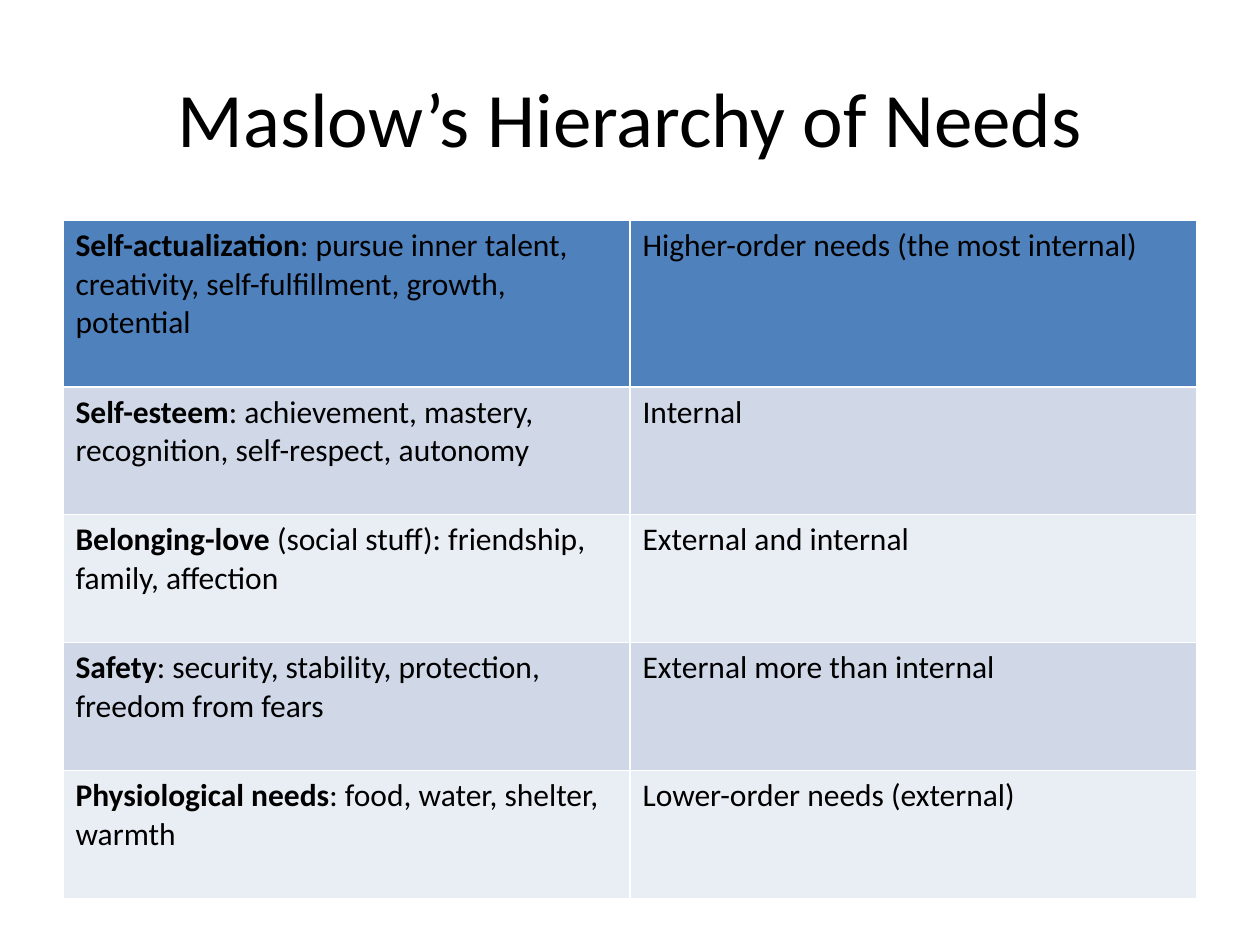
"""Build a slide with a table of Maslow's hierarchy of needs."""
from dataclasses import dataclass

from pptx import Presentation
from pptx.dml.color import RGBColor
from pptx.enum.text import MSO_ANCHOR, PP_ALIGN
from pptx.util import Inches, Pt

CENTER = PP_ALIGN.CENTER
MIDDLE = MSO_ANCHOR.MIDDLE
BLACK = RGBColor(0x00, 0x00, 0x00)
HEADER_BLUE = RGBColor(0x4F, 0x81, 0xBD)
BANDS = (RGBColor(0xD0, 0xD8, 0xE8), RGBColor(0xE9, 0xED, 0xF4))
FONT = "Calibri"
TITLE_ONLY = 5

WIDTH, HEIGHT = Inches(10), Inches(7.5)
MARGIN = int(WIDTH * 0.05)
CONTENT_WIDTH = WIDTH - 2 * MARGIN
TABLE_TOP = Inches(1.75)
TOP_ROW_HEIGHT = Inches(1.32)
ROW_HEIGHT = Inches(1.015)


@dataclass(frozen=True)
class Need:
    """A level of the hierarchy, its examples and where it arises."""
    name: str
    examples: str
    source: str


NEEDS = (
    Need("Self-actualization",
         ": pursue inner talent, creativity, self-fulfillment, growth, potential",
         "Higher-order needs (the most internal)"),
    Need("Self-esteem",
         ": achievement, mastery, recognition, self-respect, autonomy",
         "Internal"),
    Need("Belonging-love ",
         "(social stuff): friendship, family, affection",
         "External and internal"),
    Need("Safety",
         ": security, stability, protection, freedom from fears",
         "External more than internal"),
    Need("Physiological needs",
         ": food, water, shelter, warmth",
         "Lower-order needs (external)"),
)


def style_font(paragraph, size: int) -> None:
    """Give a paragraph the slide's typeface and text colour."""
    paragraph.font.name = FONT
    paragraph.font.size = Pt(size)
    paragraph.font.color.rgb = BLACK


def write_cell(cell, parts: tuple[tuple[str, bool], ...], fill: RGBColor) -> None:
    """Fill a cell and write its parts, each with its own weight."""
    cell.fill.solid()
    cell.fill.fore_color.rgb = fill
    paragraph = cell.text_frame.paragraphs[0]
    style_font(paragraph, 18)
    for text, bold in parts:
        run = paragraph.add_run()
        run.text = text
        run.font.bold = bold
        run.font.name = FONT
        run.font.size = Pt(18)
        run.font.color.rgb = BLACK


def add_title(slide, text: str) -> None:
    """Place and format the title."""
    title = slide.shapes.title
    title.left, title.top = MARGIN, int(HEIGHT * 0.04)
    title.width, title.height = CONTENT_WIDTH, Inches(1.25)
    title.text_frame.text = text
    title.text_frame.vertical_anchor = MIDDLE
    heading = title.text_frame.paragraphs[0]
    heading.alignment = CENTER
    style_font(heading, 44)


def add_needs_table(slide, needs: tuple[Need, ...]) -> None:
    """Add one row per need, with the top level as the header row."""
    table_height = TOP_ROW_HEIGHT + ROW_HEIGHT * (len(needs) - 1)
    table = slide.shapes.add_table(
        len(needs), 2, MARGIN, TABLE_TOP, CONTENT_WIDTH, table_height).table
    for level, need in enumerate(needs):
        table.rows[level].height = ROW_HEIGHT if level else TOP_ROW_HEIGHT
        fill = BANDS[(level - 1) % 2] if level else HEADER_BLUE
        write_cell(table.cell(level, 0),
                   ((need.name, True), (need.examples, False)), fill)
        write_cell(table.cell(level, 1), ((need.source, False),), fill)


def main() -> None:
    """Build and save the presentation."""
    presentation = Presentation()
    presentation.slide_width, presentation.slide_height = WIDTH, HEIGHT
    slide = presentation.slides.add_slide(presentation.slide_layouts[TITLE_ONLY])
    add_title(slide, "Maslow’s Hierarchy of Needs")
    add_needs_table(slide, NEEDS)
    presentation.save("out.pptx")


if __name__ == "__main__":
    main()
